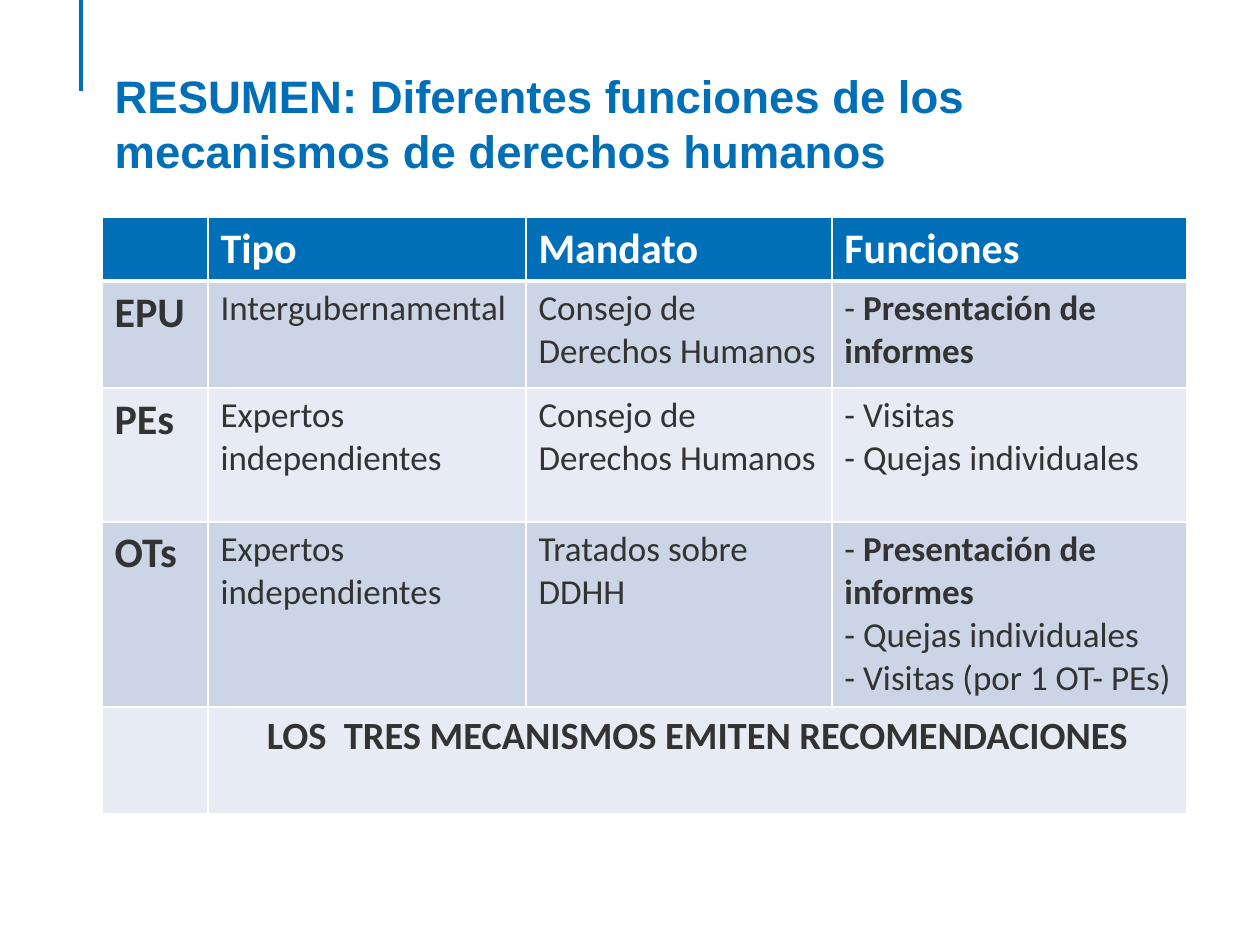
from dataclasses import dataclass
from typing import Any, NamedTuple

from lxml.etree import SubElement
from pptx import Presentation
from pptx.dml.color import RGBColor
from pptx.enum.shapes import MSO_CONNECTOR as Connector
from pptx.enum.text import MSO_ANCHOR as Anchor, MSO_AUTO_SIZE as AutoSize, PP_ALIGN as Align
from pptx.oxml.ns import qn
from pptx.util import Pt

EMU_PER_PX = 914400 / 126


@dataclass(frozen=True)
class Theme:
    blue: str = "006FB7"
    white: str = "FFFFFF"
    ink: str = "333333"
    bands: tuple[str, str] = ("CBD5E6", "E7EBF3")
    title_font: str = "Arial"
    table_font: str = "Calibri"
    title_size: int = 26
    label_size: int = 24
    closing_size: int = 22
    body_size: int = 20


class Run(NamedTuple):
    text: str
    bold: bool = False


class Row(NamedTuple):
    height: int
    label: str
    kind: str
    mandate: str
    functions: list[list[Run]]


THEME = Theme()
COLUMN_WIDTHS = (106, 318, 306, 355)
HEADER_HEIGHT, CLOSING_HEIGHT = 59, 107
HEADINGS = ("", "Tipo", "Mandato", "Funciones")
COUNCIL = "Consejo de Derechos Humanos"
EXPERTS = "Expertos independientes"
REPORTS = [Run("- "), Run("Presentación de informes", True)]
COMPLAINTS = [Run("- Quejas individuales")]
ROWS = (
    Row(107, "EPU", "Intergubernamental", COUNCIL, [REPORTS]),
    Row(134, "PEs", EXPERTS, COUNCIL, [[Run("- Visitas")], COMPLAINTS]),
    Row(185, "OTs", EXPERTS, "Tratados sobre DDHH",
        [REPORTS, COMPLAINTS, [Run("- Visitas (por 1 OT- PEs)")]]),
)
CLOSING = "LOS  TRES MECANISMOS EMITEN RECOMENDACIONES"


def px(length: int) -> int:
    return round(length * EMU_PER_PX)


def apply(target: Any, values: dict[str, Any]) -> None:
    for name, value in values.items():
        setattr(target, name, value)


def format_font(font: Any, name: str, size: int, color: str, bold: bool) -> None:
    apply(font, {"name": name, "size": Pt(size), "bold": bold})
    font.color.rgb = RGBColor.from_string(color)


def add_title(slide: Any, text: str) -> None:
    title = slide.shapes.title
    apply(title, {"left": px(102), "top": px(62), "width": px(1042), "height": px(82)})
    frame = title.text_frame
    apply(frame, {"text": text, "word_wrap": True, "auto_size": AutoSize.NONE,
                  "vertical_anchor": Anchor.TOP})
    paragraph = frame.paragraphs[0]
    paragraph.alignment = Align.LEFT
    format_font(paragraph.runs[0].font, THEME.title_font, THEME.title_size, THEME.blue, True)


def add_accent_line(slide: Any) -> None:
    line = slide.shapes.add_connector(Connector.STRAIGHT, px(81), 0, px(81), px(91))
    line.line.color.rgb = RGBColor.from_string(THEME.blue)
    line.line.width = Pt(2)
    SubElement(line._element.spPr, qn("a:effectLst"))


def style_cell(cell: Any, fill: str, top: int = 1, bottom: int = 1) -> None:
    """Give the cell white borders, in points, and a fill."""
    properties = cell._tc.get_or_add_tcPr()
    for side, width in {"lnL": 1, "lnR": 1, "lnT": top, "lnB": bottom}.items():
        border = SubElement(properties, qn(f"a:{side}"), w=str(Pt(width)))
        solid = SubElement(border, qn("a:solidFill"))
        SubElement(solid, qn("a:srgbClr"), val=THEME.white)
    cell.fill.solid()
    cell.fill.fore_color.rgb = RGBColor.from_string(fill)


def write_cell(cell: Any, lines: list[list[Run]], size: int, color: str = THEME.ink,
               alignment: Align = Align.LEFT) -> None:
    frame = cell.text_frame
    for index, runs in enumerate(lines):
        paragraph = frame.add_paragraph() if index else frame.paragraphs[0]
        paragraph.alignment = alignment
        for part in runs:
            run = paragraph.add_run()
            run.text = part.text
            format_font(run.font, THEME.table_font, size, color, part.bold)


def add_summary_table(slide: Any) -> None:
    heights = (HEADER_HEIGHT, *(row.height for row in ROWS), CLOSING_HEIGHT)
    table = slide.shapes.add_table(
        len(heights), len(COLUMN_WIDTHS), px(102), px(217),
        px(sum(COLUMN_WIDTHS)), px(sum(heights))).table
    for column, width in zip(table.columns, COLUMN_WIDTHS):
        column.width = px(width)
    for index, height in enumerate(heights):
        table.rows[index].height = px(height)
        fill = THEME.bands[(index - 1) % 2] if index else THEME.blue
        for cell in table.rows[index].cells:
            style_cell(cell, fill, top=3 if index == 1 else 1, bottom=1 if index else 3)

    for column, heading in enumerate(HEADINGS):
        if heading:
            write_cell(table.cell(0, column), [[Run(heading, True)]],
                       THEME.label_size, THEME.white)
    for index, row in enumerate(ROWS, start=1):
        write_cell(table.cell(index, 0), [[Run(row.label, True)]], THEME.label_size)
        contents = ([[Run(row.kind)]], [[Run(row.mandate)]], row.functions)
        for column, lines in enumerate(contents, start=1):
            write_cell(table.cell(index, column), lines, THEME.body_size)

    last = len(heights) - 1
    closing = table.cell(last, 1)
    closing.merge(table.cell(last, len(COLUMN_WIDTHS) - 1))
    write_cell(closing, [[Run(CLOSING, True)]], THEME.closing_size, alignment=Align.CENTER)


def main() -> None:
    presentation = Presentation()
    apply(presentation, {"slide_width": px(1260), "slide_height": px(945)})
    slide = presentation.slides.add_slide(presentation.slide_layouts[5])
    add_accent_line(slide)
    add_title(slide, "RESUMEN: Diferentes funciones de los mecanismos de derechos humanos")
    add_summary_table(slide)
    presentation.save("out.pptx")


if __name__ == "__main__":
    main()
